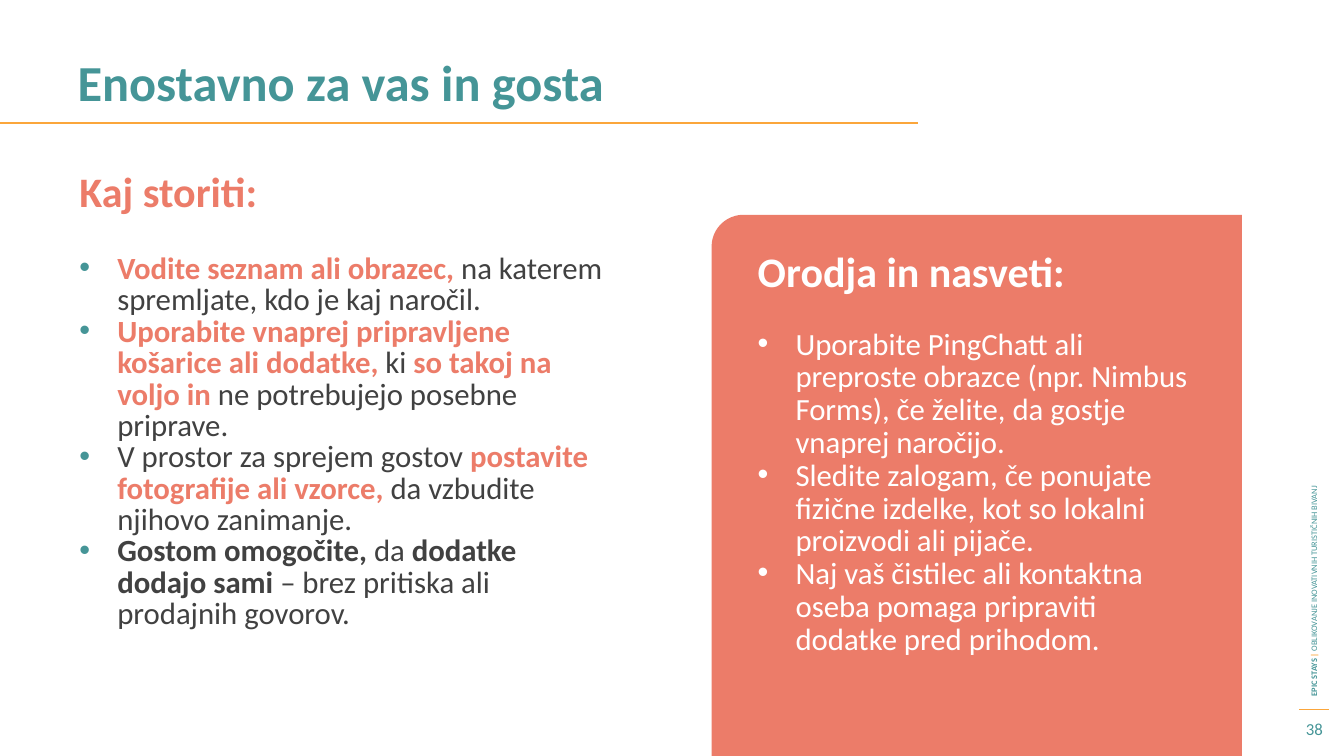
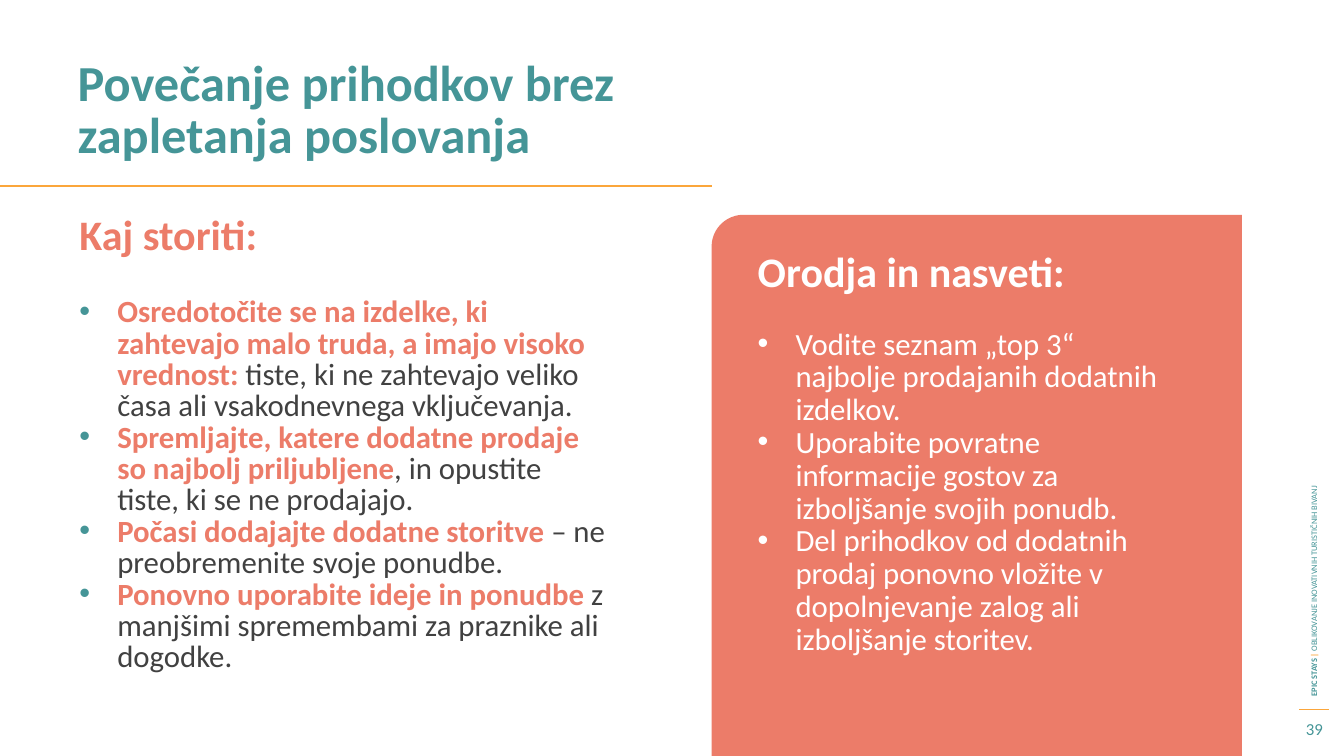
import dataclasses

import pptx
import pptx.dml.color
import pptx.enum.shapes
import pptx.enum.text
import pptx.oxml.ns
import pptx.util
from lxml import etree

Pt = pptx.util.Pt
Rgb = pptx.dml.color.RGBColor.from_string
Align = pptx.enum.text.PP_ALIGN
Anchor = pptx.enum.text.MSO_ANCHOR
Shape = pptx.enum.shapes.MSO_SHAPE

# Content: each run is (text, style)
FIRST = 38
BRAND = [("EPIC STAYS ", "brand"), ("| ", "bar"),
         ("OBLIKOVANJE INOVATIVNIH TURISTIČNIH BIVANJ", "motto")]
SLIDES = [
    {
        "title": "Enostavno za vas in gosta",
        "wide": 864, "rule": (87.8, 656), "top": 121.7, "tipw": 327,
        "todo": [
            [("Vodite seznam ali obrazec, ", "hot"),
             ("na katerem spremljate, kdo je kaj naročil.", "body")],
            [("Uporabite vnaprej pripravljene košarice ali dodatke, ", "hot"),
             ("ki", "body"), (" so takoj na voljo in ", "hot"),
             ("ne potrebujejo posebne priprave.", "body")],
            [("V prostor za sprejem gostov ", "body"),
             ("postavite fotografije ali vzorce, ", "hot"),
             ("da vzbudite njihovo zanimanje.", "body")],
            [("Gostom omogočite, ", "strong"), ("da ", "body"),
             ("dodatke dodajo sami ", "strong"),
             ("– brez pritiska ali prodajnih govorov.", "body")],
        ],
        "tips": [
            "Uporabite PingChatt ali preproste obrazce (npr. Nimbus Forms), "
            "če želite, da gostje vnaprej naročijo.",
            "Sledite zalogam, če ponujate fizične izdelke, kot so lokalni "
            "proizvodi ali pijače.",
            "Naj vaš čistilec ali kontaktna oseba pomaga pripraviti dodatke "
            "pred prihodom.",
        ],
    },
    {
        "title": "Povečanje prihodkov brez zapletanja poslovanja",
        "wide": 538.6, "rule": (133.2, 508.3), "top": 152.6, "tipw": 311.8,
        "todo": [
            [("Osredotočite se na izdelke, ki zahtevajo malo truda, "
              "a imajo visoko vrednost: ", "hot"),
             ("tiste, ki ne zahtevajo veliko časa ali vsakodnevnega "
              "vključevanja.", "body")],
            [("Spremljajte, katere dodatne prodaje so najbolj priljubljene",
              "hot"),
             (", in opustite tiste, ki se ne prodajajo.", "body")],
            [("Počasi dodajajte dodatne storitve ", "hot"),
             ("– ne preobremenite svoje ponudbe.", "body")],
            [("Ponovno uporabite ideje in ponudbe ", "hot"),
             ("z manjšimi spremembami za praznike ali dogodke.", "body")],
        ],
        "tips": [
            "Vodite seznam „top 3“ najbolje prodajanih dodatnih izdelkov.",
            "Uporabite povratne informacije gostov za izboljšanje svojih "
            "ponudb.",
            "Del prihodkov od dodatnih prodaj ponovno vložite v dopolnjevanje "
            "zalog ali izboljšanje storitev.",
        ],
    },
]


# Theme: colours, and styles as (size, colour, bold)
@dataclasses.dataclass(frozen=True)
class Theme:
    font: str = "Calibri"
    teal: str = "459597"
    coral: str = "EC7C69"
    gold: str = "FBA63B"
    ink: str = "414141"
    white: str = "FFFFFF"

    def style(self, name):
        return {
            "title": (36, self.teal, True),
            "head": (30, self.coral, True),
            "hot": (22, self.coral, True),
            "body": (22, self.ink, False),
            "strong": (22, self.ink, True),
            "tiphead": (30, self.white, True),
            "tip": (22, self.white, False),
            "page": (12, self.teal, False),
            "brand": (6, self.teal, True),
            "bar": (6, self.gold, True),
            "motto": (6, self.teal, False),
        }[name]


THEME = Theme()
WIDTH, HEIGHT = 960, 540
LEFT = 49.7
PANEL = (508.3, 153.4, 378.7, 386.6)
INDENT = 27


def assign(item, values):
    for name, value in values.items():
        setattr(item, name, value)


def place(shape, box):
    names = ("left", "top", "width", "height")
    assign(shape, dict(zip(names, map(Pt, box))))


def bullet(para, color):
    props = para._p.get_or_add_pPr()
    props.set("marL", str(Pt(INDENT)))
    props.set("indent", str(-Pt(INDENT)))
    qn = pptx.oxml.ns.qn
    tint = etree.SubElement(props, qn("a:buClr"))
    etree.SubElement(tint, qn("a:srgbClr"), val=color)
    etree.SubElement(props, qn("a:buFont"), typeface="Arial")
    etree.SubElement(props, qn("a:buChar"), char="•")


def write(para, runs, **look):
    """Fill one paragraph with styled runs."""
    assign(para, look)
    for text, name in runs:
        run = para.add_run()
        run.text = text
        size, color, bold = THEME.style(name)
        assign(run.font, {"name": THEME.font, "size": Pt(size), "bold": bold})
        run.font.color.rgb = Rgb(color)


def frame(shape, anchor=Anchor.TOP):
    body = shape.text_frame
    assign(body, {"word_wrap": True, "vertical_anchor": anchor,
                  "auto_size": pptx.enum.text.MSO_AUTO_SIZE.NONE})
    return body


def label(slide, box, runs, anchor=Anchor.TOP, **look):
    shape = slide.shapes.add_textbox(*map(Pt, box))
    write(frame(shape, anchor).paragraphs[0], runs, **look)
    return shape


def items(body, rows, color, pitch, fresh, gap=0):
    """Add bullets; fresh means the first paragraph is still empty."""
    for i, runs in enumerate(rows):
        para = body.paragraphs[0] if fresh and i == 0 else body.add_paragraph()
        bullet(para, color)
        write(para, runs, line_spacing=Pt(pitch),
              space_before=Pt(0 if i else gap))


def rule(slide, start, end, y, weight):
    line = slide.shapes.add_connector(
        pptx.enum.shapes.MSO_CONNECTOR.STRAIGHT, *map(Pt, (start, y, end, y)))
    line.line.color.rgb = Rgb(THEME.gold)
    line.line.width = Pt(weight)
    etree.SubElement(line._element.spPr, pptx.oxml.ns.qn("a:effectLst"))


def margin(slide, number):
    # Side strip: rule, turned project name, page number
    rule(slide, 928, 949, 506.9, 0.75)
    side = label(slide, (730.8, 289.4, 415.4, 14.4), BRAND, Anchor.MIDDLE)
    side.rotation = 270
    label(slide, (920.2, 508.3, 37.4, 24.5), [(str(number), "page")],
          Anchor.MIDDLE, alignment=Align.CENTER)


def heading(slide, page):
    title = slide.shapes.title
    place(title, (48.2, 38.9, page["wide"], 63.4))
    write(frame(title).paragraphs[0], [(page["title"], "title")],
          alignment=Align.LEFT, line_spacing=Pt(37.2))
    y, end = page["rule"]
    rule(slide, 0, end, y, 1.5)


def todo(slide, page):
    # Left column
    top = page["top"]
    label(slide, (LEFT, top, 442, 63.4), [("Kaj storiti:", "head")],
          line_spacing=Pt(29))
    shape = slide.shapes.add_textbox(
        *map(Pt, (LEFT, top + 56.5, 389.5, 288)))
    items(frame(shape), page["todo"], THEME.teal, 22.4, True)


def tips(slide, page):
    # Panel: a quarter turn brings the one round corner to the top left
    x, y, w, h = PANEL
    box = (x + (w - h) / 2, y + (h - w) / 2, h, w)
    panel = slide.shapes.add_shape(Shape.ROUND_1_RECTANGLE, *map(Pt, box))
    panel.rotation = 270
    panel.adjustments[0] = 0.06
    panel.shadow.inherit = False
    panel.fill.solid()
    panel.fill.fore_color.rgb = Rgb(THEME.coral)
    panel.line.fill.background()

    pitch = 23.4
    text = label(slide, (534.2, 184.3, page["tipw"], 258.5),
                 [("Orodja in nasveti:", "tiphead")], line_spacing=Pt(pitch))
    rows = [[(tip, "tip")] for tip in page["tips"]]
    items(text.text_frame, rows, THEME.white, pitch, False, pitch)


def main():
    deck = pptx.Presentation()
    assign(deck, {"slide_width": Pt(WIDTH), "slide_height": Pt(HEIGHT)})
    for number, page in enumerate(SLIDES, FIRST):
        slide = deck.slides.add_slide(deck.slide_layouts[5])
        margin(slide, number)
        for part in (heading, todo, tips):
            part(slide, page)
    deck.save("out.pptx")


if __name__ == "__main__":
    main()
